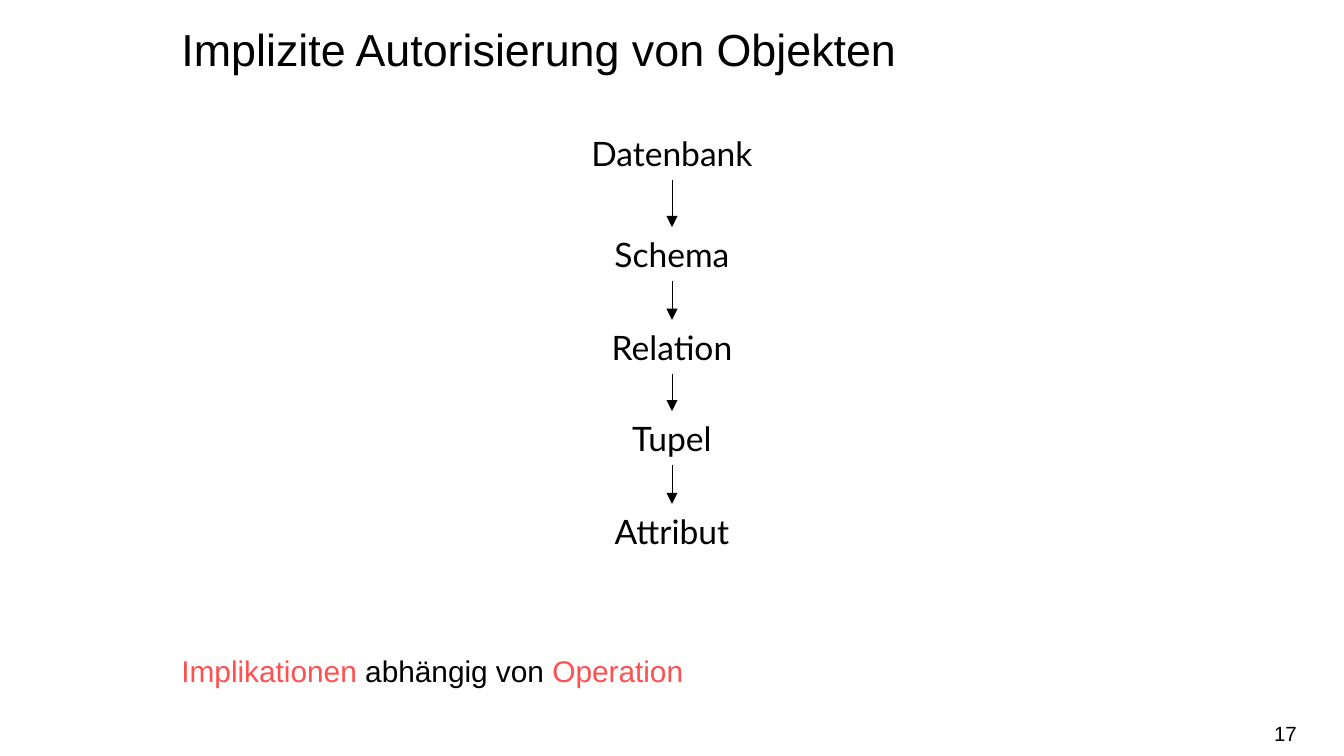
from itertools import pairwise

from pptx import Presentation
from pptx import util as u
from pptx.dml.color import RGBColor
from pptx.enum import shapes, text
from pptx.oxml.ns import qn
from lxml import etree

BLACK, RED = "000000", "FF5050"
MID = 5
HIGH = 0.4
LEVELS = [("Datenbank", 0.94), ("Schema", 1.69), ("Relation", 2.38),
          ("Tupel", 3.06), ("Attribut", 3.75)]


def color(code):
    return RGBColor.from_string(code)


def style(run, size, font="Arial", code=BLACK):
    run.font.size = u.Pt(size)
    run.font.name = font
    run.font.color.rgb = color(code)


def place(shape, left, top, width, height):
    shape.left, shape.top = u.Inches(left), u.Inches(top)
    shape.width, shape.height = u.Inches(width), u.Inches(height)


def title(slide, words):
    shape = slide.shapes.title
    place(shape, 1.25, 0, 7.5, 0.62)
    frame = shape.text_frame
    frame.text = words
    frame.vertical_anchor = text.MSO_ANCHOR.MIDDLE
    para = frame.paragraphs[0]
    para.alignment = text.PP_ALIGN.LEFT
    para.line_spacing = 1.25
    style(para.runs[0], 24)


def body(slide, parts):
    shape = slide.placeholders[1]
    place(shape, 1.25, 4.81, 7.5, 0.61)
    para = shape.text_frame.paragraphs[0]
    props = para._p.get_or_add_pPr()
    props.set("marL", "0")
    props.set("indent", "0")
    etree.SubElement(props, qn("a:buNone"))
    para.space_before = u.Pt(0)
    for words, code in parts:
        run = para.add_run()
        run.text = words
        style(run, 16, code=code)


def label(slide, words, box, size, font, align):
    shape = slide.shapes.add_textbox(*map(u.Inches, box))
    frame = shape.text_frame
    frame.word_wrap = True
    frame.text = words
    para = frame.paragraphs[0]
    para.alignment = align
    style(para.runs[0], size, font)
    return frame


def arrow(slide, start, end):
    link = slide.shapes.add_connector(
        shapes.MSO_CONNECTOR.STRAIGHT,
        u.Inches(MID), u.Inches(start), u.Inches(MID), u.Inches(end))
    link.line.color.rgb = color(BLACK)
    link.line.width = u.Pt(0.5)
    props = link._element.spPr
    etree.SubElement(props.find(qn("a:ln")), qn("a:tailEnd"), type="triangle")
    etree.SubElement(props, qn("a:effectLst"))


def number(slide, words):
    frame = label(slide, words, (7.41, 5.31, 2.24, 0.3), 11, "Arial",
                  text.PP_ALIGN.RIGHT)
    frame.margin_left = frame.margin_right = 0
    frame.vertical_anchor = text.MSO_ANCHOR.MIDDLE


def main():
    deck = Presentation()
    deck.slide_width = u.Inches(10)
    deck.slide_height = deck.slide_width * 9 // 16
    slide = deck.slides.add_slide(deck.slide_layouts[1])
    title(slide, "Implizite Autorisierung von Objekten")
    body(slide, [("Implikationen", RED), (" abhängig von ", BLACK),
                 ("Operation", RED)])
    for words, top in LEVELS:
        label(slide, words, (MID - 0.97, top, 1.94, HIGH), 18, "Lato",
              text.PP_ALIGN.CENTER)
    for (_, upper), (_, lower) in pairwise(LEVELS):
        arrow(slide, upper + HIGH, lower)
    number(slide, "17")
    deck.save("out.pptx")


if __name__ == "__main__":
    main()
